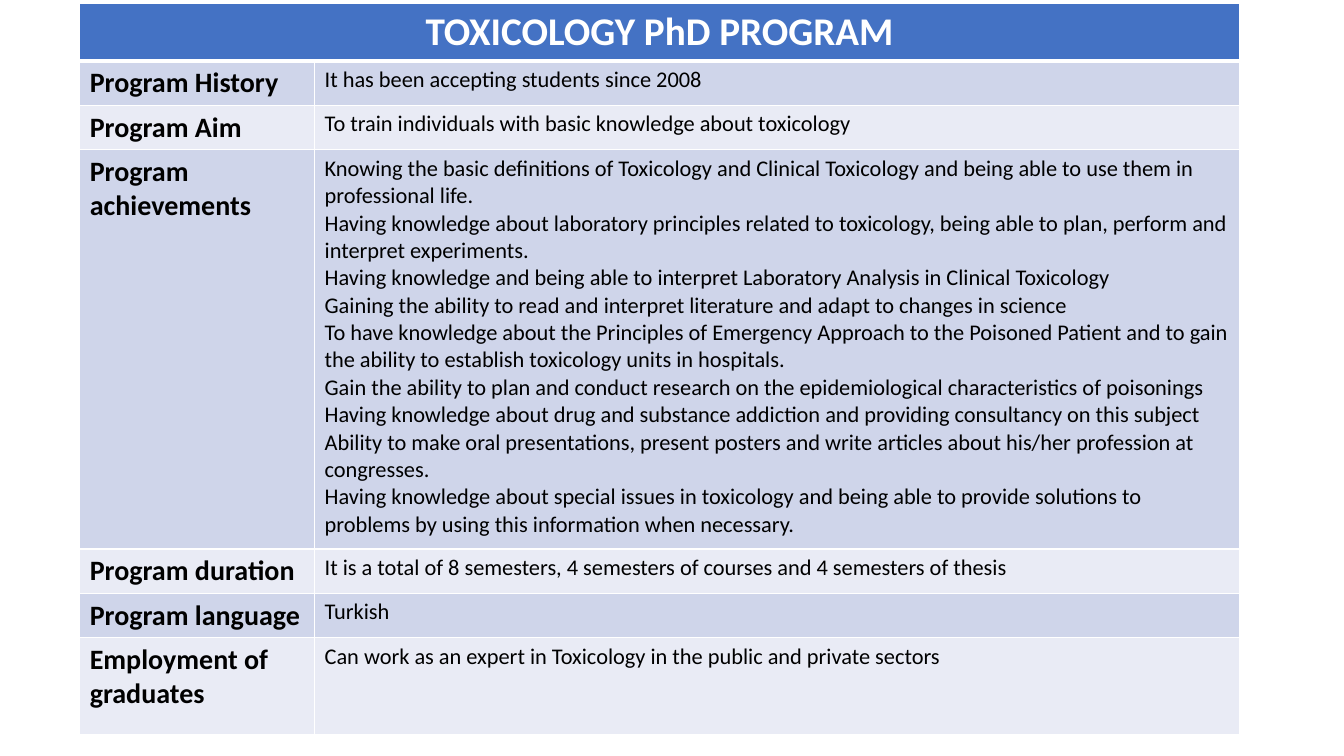
from lxml import etree
from pptx import Presentation
from pptx import util as u
from pptx.dml.color import RGBColor
from pptx.enum import text
from pptx.oxml.ns import qn

PX = 9144  # EMU per px, 100 px to the inch


def px(n):
    return u.Emu(n * PX)


def rgb(hex_):
    return RGBColor.from_string(hex_)


class ProgramSlide:
    FONT = "Calibri"
    WHITE, BLACK, BLUE = "FFFFFF", "000000", "4472C4"
    BANDS = ("CFD5EA", "E9EBF5")
    TITLE_SIZE, LABEL_SIZE, BODY_SIZE = 28, 20, 16

    def __init__(self, prs):
        self.s = prs.slides.add_slide(prs.slide_layouts[6])

    def borders(self, cell, top=1, bottom=1):
        """Draw white borders; widths are points, the sides are always 1."""
        tcPr = cell._tc.get_or_add_tcPr()
        widths = {"a:lnL": 1, "a:lnR": 1, "a:lnT": top, "a:lnB": bottom}
        for i, (tag, width) in enumerate(widths.items()):
            ln = etree.Element(qn(tag), w=str(u.Pt(width)))
            fill = etree.SubElement(ln, qn("a:solidFill"))
            etree.SubElement(fill, qn("a:srgbClr"), val=self.WHITE)
            tcPr.insert(i, ln)

    def cell(self, cell, lines, size, color, fill, bold=False, align=None):
        cell.fill.solid()
        cell.fill.fore_color.rgb = rgb(fill)
        tf = cell.text_frame
        tf.text = "\n".join(lines)
        for p in tf.paragraphs:
            p.alignment = align
            p.font.name = self.FONT
            p.font.size = u.Pt(size)
            p.font.bold = bold
            p.font.color.rgb = rgb(color)

    def table(self, left, top, widths, heights, title, rows):
        """Place a title row over banded rows of (label, lines)."""
        tbl = self.s.shapes.add_table(
            len(heights), len(widths), px(left), px(top),
            px(sum(widths)), px(sum(heights))).table
        for col, w in zip(tbl.columns, widths):
            col.width = px(w)
        for row, h in zip(tbl.rows, heights):
            row.height = px(h)

        tbl.cell(0, 0).merge(tbl.cell(0, 1))
        self.cell(tbl.cell(0, 0), [title], self.TITLE_SIZE, self.WHITE,
                  self.BLUE, True, text.PP_ALIGN.CENTER)
        for i, (label, lines) in enumerate(rows):
            band = self.BANDS[i % 2]
            self.cell(tbl.cell(i + 1, 0), [label], self.LABEL_SIZE,
                      self.BLACK, band, True)
            self.cell(tbl.cell(i + 1, 1), lines, self.BODY_SIZE,
                      self.BLACK, band)
        for i, row in enumerate(tbl.rows):
            for c in row.cells:
                self.borders(c, top=3 if i == 1 else 1,
                             bottom=3 if i == 0 else 1)


ROWS = [
    ("Program History", ["It has been accepting students since 2008"]),
    ("Program Aim",
     ["To train individuals with basic knowledge about toxicology"]),
    ("Program achievements", [
        "Knowing the basic definitions of Toxicology and Clinical Toxicology "
        "and being able to use them in professional life.",
        "Having knowledge about laboratory principles related to toxicology, "
        "being able to plan, perform and interpret experiments.",
        "Having knowledge and being able to interpret Laboratory Analysis in "
        "Clinical Toxicology",
        "Gaining the ability to read and interpret literature and adapt to "
        "changes in science",
        "To have knowledge about the Principles of Emergency Approach to the "
        "Poisoned Patient and to gain the ability to establish toxicology "
        "units in hospitals.",
        "Gain the ability to plan and conduct research on the "
        "epidemiological characteristics of poisonings",
        "Having knowledge about drug and substance addiction and providing "
        "consultancy on this subject",
        "Ability to make oral presentations, present posters and write "
        "articles about his/her profession at congresses.",
        "Having knowledge about special issues in toxicology and being able "
        "to provide solutions to problems by using this information when "
        "necessary.",
    ]),
    ("Program duration",
     ["It is a total of 8 semesters, 4 semesters of courses and 4 semesters "
      "of thesis"]),
    ("Program language", ["Turkish"]),
    ("Employment of graduates",
     ["Can work as an expert in Toxicology in the public and private "
      "sectors"]),
]


def main():
    prs = Presentation()
    prs.slide_width, prs.slide_height = px(1333), px(750)
    ProgramSlide(prs).table(
        79, 3, [233, 917], [57, 44, 44, 396, 44, 44, 96],
        "TOXICOLOGY PhD PROGRAM", ROWS)
    prs.save("out.pptx")


if __name__ == "__main__":
    main()
